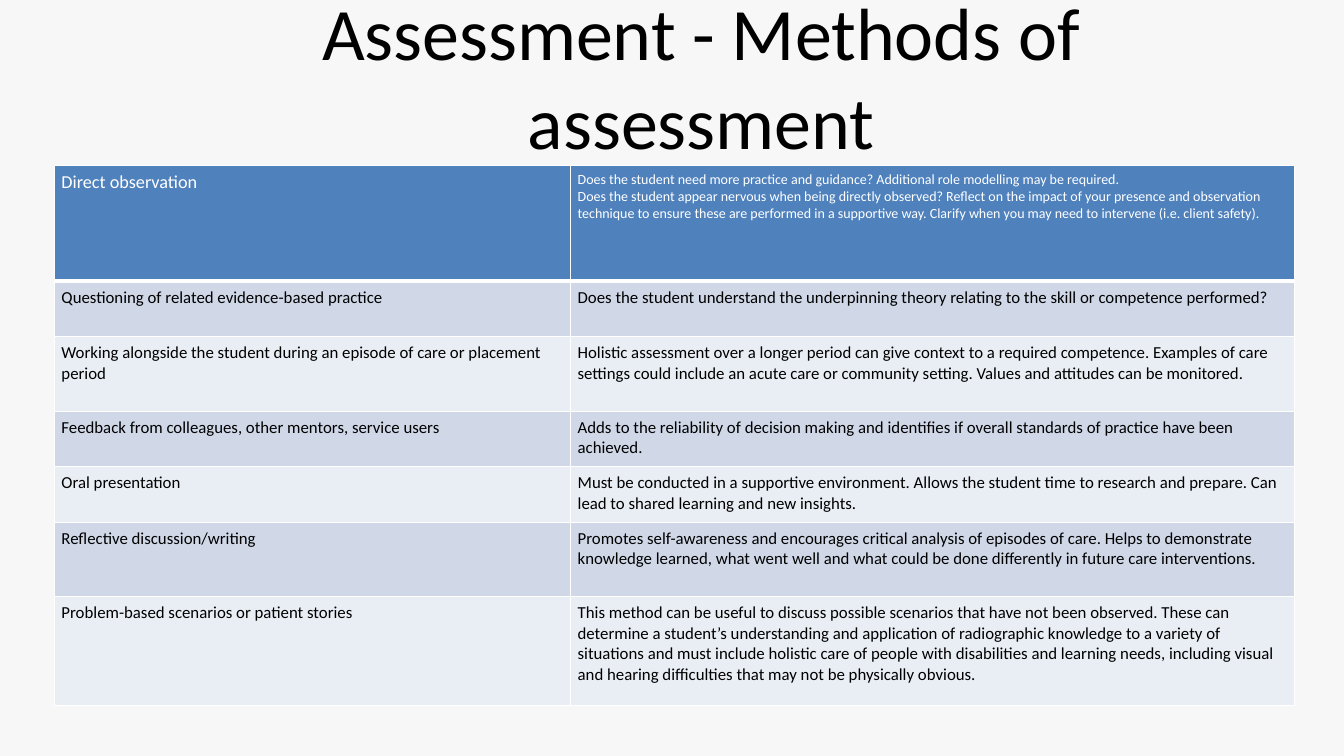
"""Build a slide with a table of assessment methods."""
from lxml.etree import SubElement
from pptx import Presentation
from pptx.dml.color import RGBColor
from pptx.enum.text import MSO_ANCHOR, MSO_AUTO_SIZE, PP_ALIGN
from pptx.oxml.ns import qn
from pptx.util import Inches, Pt

TITLE = "Assessment - Methods of assessment"
METHODS = [
    ("Direct observation",
     "Does the student need more practice and guidance? Additional role modelling may be required.\n"
     "Does the student appear nervous when being directly observed? Reflect on the impact of your "
     "presence and observation technique to ensure these are performed in a supportive way. "
     "Clarify when you may need to intervene (i.e. client safety)."),
    ("Questioning of related evidence-based practice",
     "Does the student understand the underpinning theory relating to the skill or competence performed?"),
    ("Working alongside the student during an episode of care or placement period",
     "Holistic assessment over a longer period can give context to a required competence. Examples of "
     "care settings could include an acute care or community setting. Values and attitudes can be monitored."),
    ("Feedback from colleagues, other mentors, service users",
     "Adds to the reliability of decision making and identifies if overall standards of practice "
     "have been achieved."),
    ("Oral presentation",
     "Must be conducted in a supportive environment. Allows the student time to research and prepare. "
     "Can lead to shared learning and new insights."),
    ("Reflective discussion/writing",
     "Promotes self-awareness and encourages critical analysis of episodes of care. Helps to demonstrate "
     "knowledge learned, what went well and what could be done differently in future care interventions."),
    ("Problem-based scenarios or patient stories",
     "This method can be useful to discuss possible scenarios that have not been observed. These can "
     "determine a student’s understanding and application of radiographic knowledge to a variety of "
     "situations and must include holistic care of people with disabilities and learning needs, "
     "including visual and hearing difficulties that may not be physically obvious."),
]
COLUMN_WIDTHS = [5.12, 7.18]
ROW_HEIGHTS = [1.15, 0.55, 0.74, 0.55, 0.55, 0.74, 1.08]
TITLE_BOX = {"left": 1.38, "top": 0.15, "width": 11.15, "height": 1.2}
CELL_MARGINS = {"margin_left": 0.07, "margin_top": 0.06, "margin_right": 0.09, "margin_bottom": 0.06}
HEADER_SIZES = [13, 10]
BODY_SIZE = 12
COLORS = {"background": "F7F7F7", "text": "000000", "header": "4F81BD",
          "header_text": "FFFFFF", "border": "FFFFFF", "odd": "D0D8E8", "even": "E9EDF4"}


def color(name):
    return RGBColor.from_string(COLORS[name])


def format_font(font, size, color_name):
    for name, value in {"name": "Calibri", "size": Pt(size), "bold": False}.items():
        setattr(font, name, value)
    font.color.rgb = color(color_name)


def add_borders(cell, bottom_width):
    properties = cell._tc.get_or_add_tcPr()
    for side, width in {"L": 1, "R": 1, "T": 1, "B": bottom_width}.items():
        line = SubElement(properties, qn(f"a:ln{side}"), w=str(Pt(width)))
        fill = SubElement(line, qn("a:solidFill"))
        SubElement(fill, qn("a:srgbClr"), val=COLORS["border"])


def add_title(slide):
    title = slide.shapes.title
    for name, value in TITLE_BOX.items():
        setattr(title, name, Inches(value))
    frame = title.text_frame
    frame.text = TITLE
    frame.word_wrap = True
    frame.auto_size = MSO_AUTO_SIZE.NONE
    frame.vertical_anchor = MSO_ANCHOR.MIDDLE
    paragraph = frame.paragraphs[0]
    paragraph.alignment = PP_ALIGN.CENTER
    format_font(paragraph.runs[0].font, 52.8, "text")


def fill_cell(cell, text, row, column):
    header = row == 0
    add_borders(cell, 3 if header else 1)
    cell.fill.solid()
    cell.fill.fore_color.rgb = color("header" if header else "odd" if row % 2 else "even")
    for name, value in CELL_MARGINS.items():
        setattr(cell, name, Inches(value))
    cell.text = text
    size = HEADER_SIZES[column] if header else BODY_SIZE
    for paragraph in cell.text_frame.paragraphs:
        format_font(paragraph.runs[0].font, size, "header_text" if header else "text")


def add_methods_table(slide):
    table = slide.shapes.add_table(
        len(METHODS), len(COLUMN_WIDTHS), Inches(0.54), Inches(1.64),
        Inches(sum(COLUMN_WIDTHS)), Inches(sum(ROW_HEIGHTS))).table
    table.first_row = True
    table.horz_banding = False
    for column, width in zip(table.columns, COLUMN_WIDTHS):
        column.width = Inches(width)
    for row, height in zip(table.rows, ROW_HEIGHTS):
        row.height = Inches(height)
    for row, texts in enumerate(METHODS):
        for column, text in enumerate(texts):
            fill_cell(table.cell(row, column), text, row, column)


def main():
    presentation = Presentation()
    presentation.slide_width = Inches(13.33)
    presentation.slide_height = Inches(7.5)
    slide = presentation.slides.add_slide(presentation.slide_layouts[5])
    slide.background.fill.solid()
    slide.background.fill.fore_color.rgb = color("background")
    add_title(slide)
    add_methods_table(slide)
    presentation.save("out.pptx")


if __name__ == "__main__":
    main()
